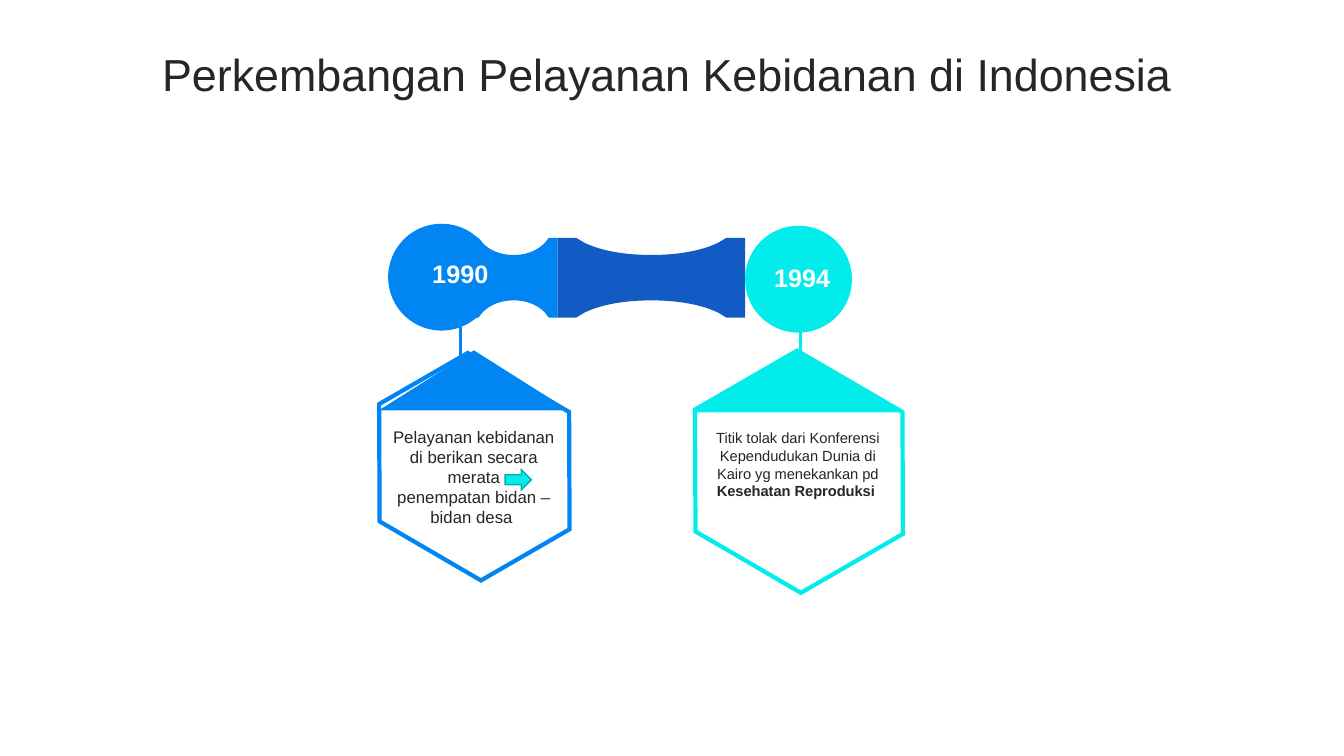
from lxml import etree
from pptx import Presentation
from pptx import util as u
from pptx.dml.color import RGBColor
from pptx.enum import shapes, text
from pptx.oxml.ns import qn

BLUE = RGBColor(0x00, 0x85, 0xF2)
NAVY = RGBColor(0x12, 0x5A, 0xC4)
CYAN = RGBColor(0x02, 0xEC, 0xEC)
TEAL = RGBColor(0x01, 0xAF, 0xAF)
INK = RGBColor(0x26, 0x26, 0x26)
WHITE = RGBColor(0xFF, 0xFF, 0xFF)
SHAPE = shapes.MSO_SHAPE


def bezier(start, ctrl1, ctrl2, end, steps=12):
    """Points along a cubic curve, after its start."""
    points = []
    for i in range(1, steps + 1):
        t = i / steps
        weights = (1 - t) ** 3, 3 * t * (1 - t) ** 2, 3 * t * t * (1 - t), t ** 3
        points.append(tuple(sum(w * p[axis] for w, p in zip(weights, (start, ctrl1, ctrl2, end)))
                            for axis in (0, 1)))
    return points


class Timeline:
    font = "Arial"

    def __init__(self, slide):
        self.items = slide.shapes

    def paint(self, shape, fill, line=None, width=0):
        shape.shadow.inherit = False
        shape.fill.solid()
        shape.fill.fore_color.rgb = fill
        if line is None:
            shape.line.fill.background()
        else:
            shape.line.color.rgb = line
            shape.line.width = u.Pt(width)
            # Sharp corners
            outline = shape._element.spPr.find(qn("a:ln"))
            etree.SubElement(outline, qn("a:miter"), lim="800000")
        return shape

    def preset(self, kind, box, fill, line=None, width=0):
        shape = self.items.add_shape(kind, *map(u.Inches, box))
        return self.paint(shape, fill, line, width)

    def label(self, box, runs, size, color=INK, bold=False):
        frame = self.items.add_textbox(*map(u.Inches, box)).text_frame
        frame.word_wrap = True
        paragraph = frame.paragraphs[0]
        paragraph.alignment = text.PP_ALIGN.CENTER
        paragraph.font.name = self.font
        paragraph.font.size = u.Pt(size)
        paragraph.font.color.rgb = color
        paragraph.font.bold = bold
        for part in runs:
            for i, line in enumerate(part.split("\n")):
                if i:
                    paragraph.add_line_break()
                run = paragraph.add_run()
                run.text = line
                # Parts after the first are emphasised
                if part is not runs[0]:
                    run.font.bold = True
        return frame

    def waisted_bar(self, left, right, color, top=2.36, bottom=3.15):
        """A bar whose upper and lower edges curve inwards."""
        center, half = (left + right) / 2, (right - left) / 2

        def at(across, down):
            return center + across * half, top + down

        edge = [at(-1, 0), at(-0.8, 0), at(-0.71, 0.05)]
        edge += bezier(edge[-1], at(-0.53, 0.13), at(-0.28, 0.17), at(0, 0.17))
        edge += [(2 * center - x, y) for x, y in reversed(edge[:-1])]
        edge += [(x, top + bottom - y) for x, y in reversed(edge)]
        outline = [(u.Inches(x), u.Inches(y)) for x, y in edge]
        builder = self.items.build_freeform(*outline[0])
        builder.add_line_segments(outline[1:], close=True)
        self.paint(builder.convert_to_shape(), color)

    def stem(self, x, top, color, length=0.36):
        line = self.items.add_connector(
            shapes.MSO_CONNECTOR.STRAIGHT, *map(u.Inches, (x, top, x, top + length)))
        line.line.color.rgb = color
        line.line.width = u.Pt(2)
        properties = line._element.spPr
        etree.SubElement(properties.find(qn("a:ln")), qn("a:tailEnd"), type="oval")
        etree.SubElement(properties, qn("a:effectLst"))

    def card(self, hexagon, roof, words, runs, size, color):
        body = self.preset(SHAPE.HEXAGON, hexagon, WHITE, color, 3)
        body.adjustments[0] = 0.286
        body.rotation = 330
        self.preset(SHAPE.ISOSCELES_TRIANGLE, roof, color, color, 3)
        self.label(words, runs, size)


def main():
    deck = Presentation()
    deck.slide_width, deck.slide_height = u.Inches(13.33), u.Inches(7.5)
    timeline = Timeline(deck.slides.add_slide(deck.slide_layouts[6]))

    # Title
    title = timeline.label((0.35, 0.37, 12.66, 0.79),
                           ["Perkembangan Pelayanan Kebidanan di Indonesia "], 32)
    title.vertical_anchor = text.MSO_ANCHOR.MIDDLE
    title.paragraphs[0].line_spacing = 0.9
    title.paragraphs[0].space_before = u.Pt(10)

    # Band joining the two years
    timeline.waisted_bar(4.66, 5.53, BLUE)
    timeline.waisted_bar(5.53, 7.39, NAVY)
    timeline.preset(SHAPE.OVAL, (3.85, 2.22, 1.06, 1.06), BLUE)
    timeline.preset(SHAPE.OVAL, (7.39, 2.24, 1.06, 1.06), CYAN)
    timeline.label((4.09, 2.51, 0.95, 0.4), ["1990"], 18, WHITE, True)
    timeline.label((7.48, 2.55, 0.95, 0.4), ["1994"], 18, WHITE, True)
    timeline.stem(4.57, 3.24, BLUE)
    timeline.stem(7.94, 3.21, CYAN)

    # Cards below the years
    timeline.card((6.74, 3.63, 2.37, 2.1), (6.96, 3.5, 1.9, 0.57), (6.9, 4.21, 2.03, 1.73),
                  ["Titik tolak dari Konferensi Kependudukan Dunia di Kairo yg menekankan pd ",
                   "Kesehatan Reproduksi "], 10.5, CYAN)
    timeline.card((3.62, 3.62, 2.17, 2.02), (3.83, 3.5, 1.74, 0.55), (3.77, 4.18, 1.86, 1.63),
                  ["Pelayanan kebidanan di berikan secara merata\npenempatan bidan – bidan desa "],
                  12, BLUE)
    timeline.preset(SHAPE.RIGHT_ARROW, (5.01, 4.66, 0.26, 0.2), CYAN, TEAL, 1)

    deck.save("out.pptx")


if __name__ == "__main__":
    main()
